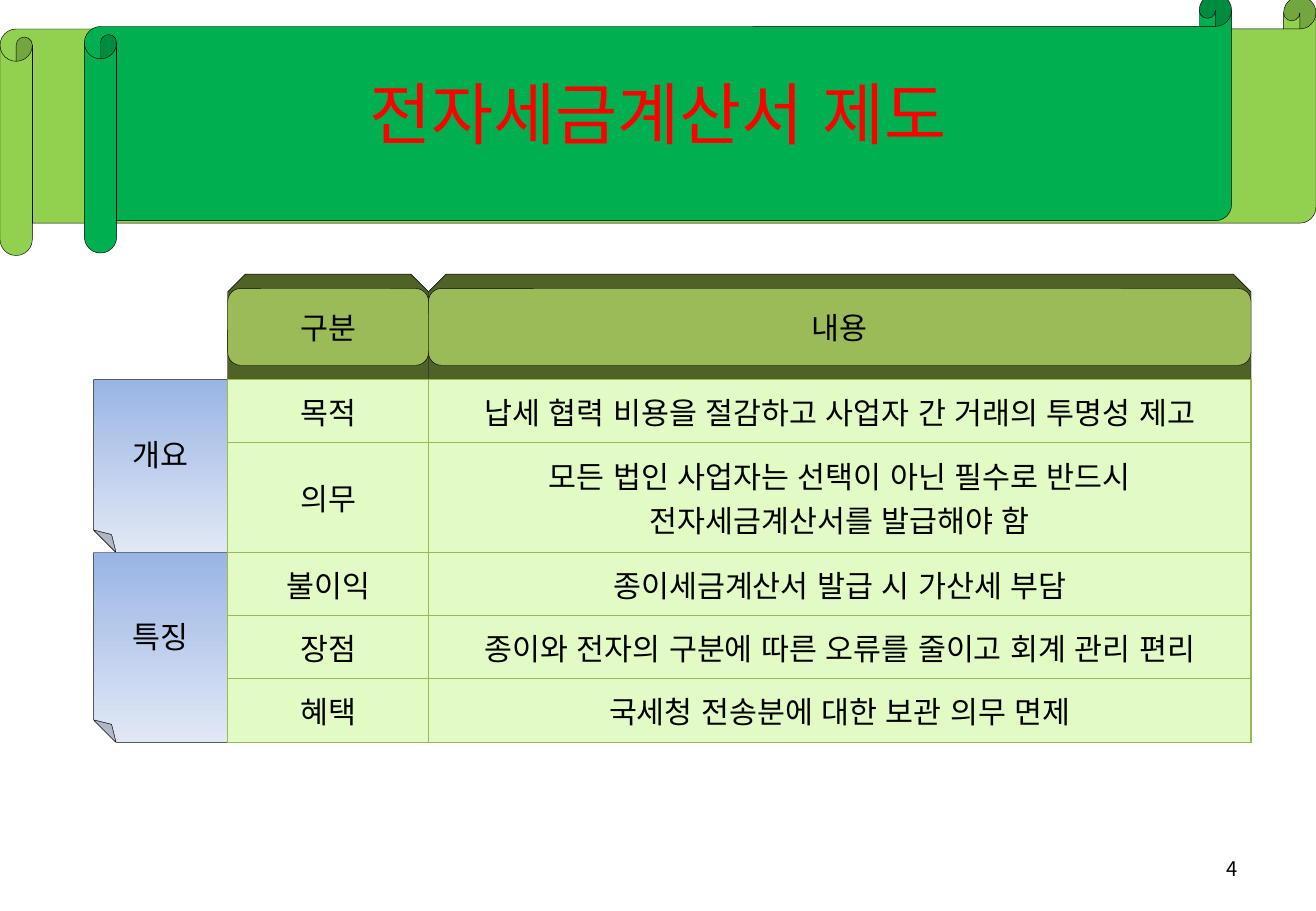
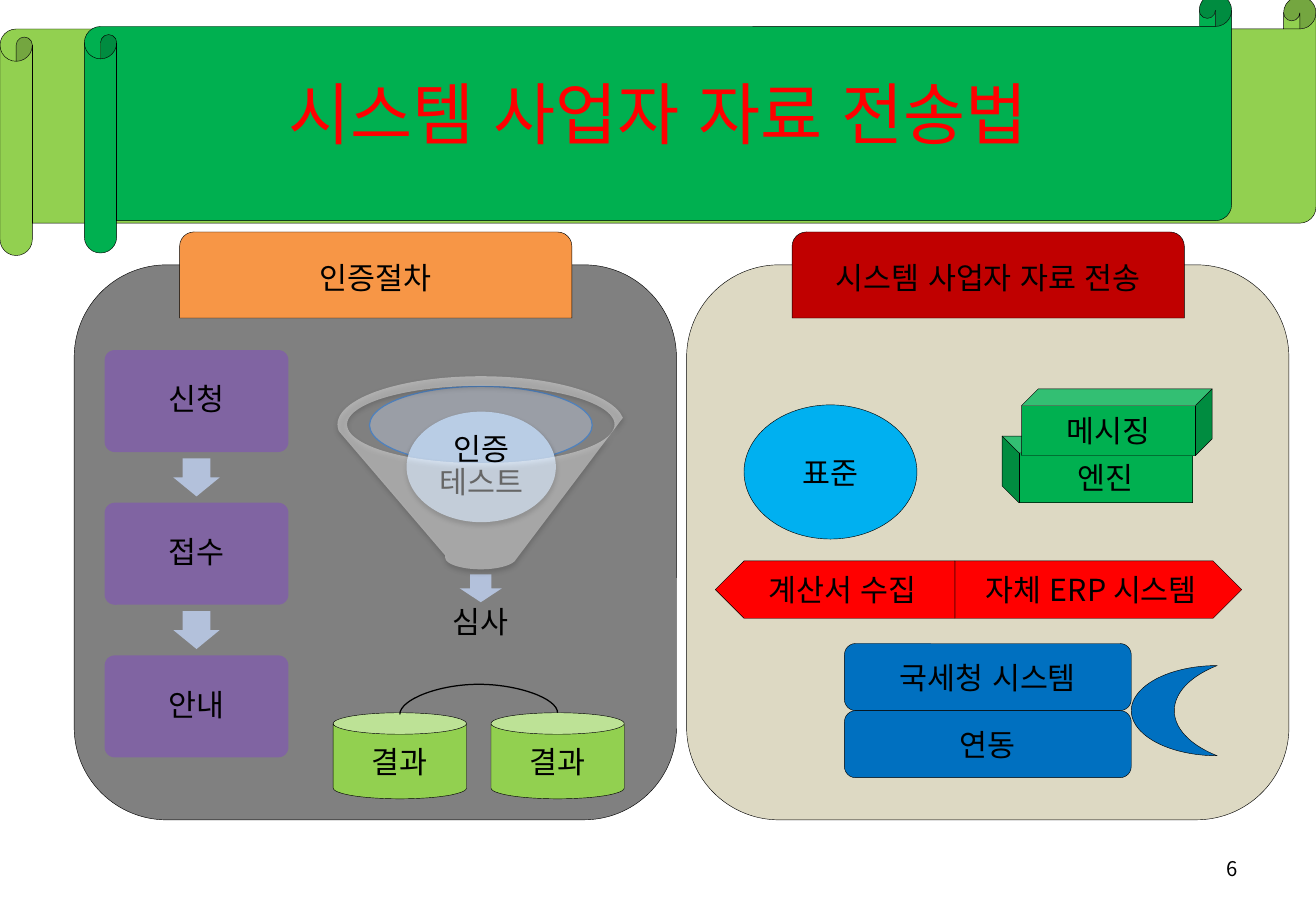
from itertools import accumulate
from lxml.etree import SubElement
from pptx import Presentation
from pptx.dml.color import RGBColor
from pptx.enum.lang import MSO_LANGUAGE_ID as Lang
from pptx.enum.shapes import MSO_CONNECTOR as Link, MSO_SHAPE as Form
from pptx.enum.text import MSO_ANCHOR as Anchor, MSO_AUTO_SIZE as AutoSize, PP_ALIGN as Align
from pptx.oxml.ns import qn
from pptx.util import Pt

FONT = "Noto Sans CJK KR"
BLACK, RED, GREEN, LIME = "000000", "FF0000", "00B050", "92D050"
OLIVE, DARK_OLIVE, PALE_GREEN, TABLE_LINE = "9BBB59", "4F6228", "E2FAC3", "98B955"
PURPLE, PALE_BLUE, BLUE = "8064A2", "B3C1DB", "0070C0"
SHEET = ("9AB5E4", "E1E8F5")

BANNERS = [(LIME, (0, -2, 780, 153.5)), (GREEN, (50, -3.5, 680, 153.5))]

HEADERS = ["구분", "내용"]
SECTIONS = [
    ("개요", [
        ("목적", "납세 협력 비용을 절감하고 사업자 간 거래의 투명성 제고", 37.5),
        ("의무", "모든 법인 사업자는 선택이 아닌 필수로 반드시 전자세금계산서를 발급해야 함", 65),
    ]),
    ("특징", [
        ("불이익", "종이세금계산서 발급 시 가산세 부담", 37.5),
        ("장점", "종이와 전자의 구분에 따른 오류를 줄이고 회계 관리 편리", 37.5),
        ("혜택", "국세청 전송분에 대한 보관 의무 면제", 37.5),
    ]),
]
TABLE_LEFT, TABLE_TOP, COLUMNS = 135, 225, (119, 487.5)
SECTION_WIDTH = 79.5
HEADER_HEIGHT, HEADER_INSET = 62.5, 8.5

PANELS = [
    (44, "808080", "인증절차", "F79646"),
    (407, "DDD9C3", "시스템 사업자 자료 전송", "C00000"),
]
STEPS = ["신청", "접수", "안내"]
RESULTS = ["결과", "결과"]
# form, text, fill, frame, mirrored
TRANSFER = [
    (Form.OVAL, "표준", "00B0F0", (441, 240, 102.5, 79.5), False),
    (Form.PENTAGON, "자체 ERP 시스템", RED, (566, 332.5, 170, 34), False),
    (Form.PENTAGON, "계산서 수집", RED, (424, 332.5, 142, 34), True),
    (Form.CUBE, "엔진", GREEN, (594, 258.5, 113, 39.5), True),
    (Form.CUBE, "메시징", GREEN, (605.5, 230.5, 113, 39.5), False),
    (Form.ROUNDED_RECTANGLE, "국세청 시스템", BLUE, (500.5, 381.5, 170, 39.75), False),
    (Form.ROUNDED_RECTANGLE, "연동", BLUE, (500.5, 421.25, 170, 39.75), False),
    (Form.MOON, "", BLUE, (670.5, 394.5, 51, 53.5), False),
]


def rgb(value):
    return RGBColor.from_string(value)


def points(frame):
    return [Pt(length) for length in frame]


def write(text_frame, text, size=18, color=BLACK, align=Align.CENTER, spacing=None):
    text_frame.text = text
    para = text_frame.paragraphs[0]
    para.alignment = align
    para.line_spacing = spacing
    font = para.runs[0].font
    font.size, font.name, font.language_id = Pt(size), FONT, Lang.KOREAN
    font.color.rgb = rgb(color)
    # Hangul takes its typeface from a:ea
    SubElement(para.runs[0].font._element, qn("a:ea"), typeface=FONT)


def set_up_frame(text_frame, margin=None):
    text_frame.word_wrap = True
    text_frame.auto_size = AutoSize.NONE
    text_frame.vertical_anchor = Anchor.MIDDLE
    if margin is not None:
        text_frame.margin_left = text_frame.margin_right = Pt(margin)
        text_frame.margin_top = text_frame.margin_bottom = Pt(margin)


def set_fill(shape, fill, opacity):
    if isinstance(fill, tuple):
        shape.fill.gradient()
        shape.fill.gradient_angle = 270
        for stop, color in zip(shape.fill.gradient_stops, fill):
            stop.color.rgb = rgb(color)
        return
    shape.fill.solid()
    shape.fill.fore_color.rgb = rgb(fill)
    if opacity < 100:
        color = shape.element.spPr.find(".//" + qn("a:srgbClr"))
        SubElement(color, qn("a:alpha"), val=str(opacity * 1000))


def cast_shadow(shape, opacity):
    effects = shape.element.spPr.find(qn("a:effectLst"))
    shadow = SubElement(effects, qn("a:outerShdw"), blurRad=str(Pt(3.1)),
                        dist=str(Pt(1.7)), dir="5400000", rotWithShape="0")
    color = SubElement(shadow, qn("a:srgbClr"), val=BLACK)
    SubElement(color, qn("a:alpha"), val=str(opacity * 1000))


def add_form(shapes, form, frame, fill, text="", line=BLACK, weight=0.25, opacity=100,
             mirrored=False, adjust=(), shadow=0, margin=None, spacing=None):
    shape = shapes.add_shape(form, *points(frame))
    shape.shadow.inherit = False
    for index, value in enumerate(adjust):
        shape.adjustments[index] = value
    set_fill(shape, fill, opacity)
    if line:
        shape.line.color.rgb = rgb(line)
        shape.line.width = Pt(weight)
    else:
        shape.line.fill.background()
    if mirrored:
        shape.element.spPr.xfrm.set("flipH", "1")
    if shadow:
        cast_shadow(shape, shadow)
    if text:
        set_up_frame(shape.text_frame, margin)
        write(shape.text_frame, text, spacing=spacing)
    return shape


def add_text(shapes, text, frame, **style):
    box = shapes.add_textbox(*points(frame))
    set_up_frame(box.text_frame)
    write(box.text_frame, text, **style)


def add_page(deck, layout, title, number):
    page = deck.slides.add_slide(layout)
    heading = page.shapes.title
    heading.left, heading.top, heading.width, heading.height = points((39, 21.5, 702, 90))
    set_up_frame(heading.text_frame)
    write(heading.text_frame, title, size=40, color=RED)
    add_text(page.shapes, number, (559, 500.5, 182, 29), size=12, align=Align.RIGHT)
    return page


def move_banners_to_layout(page, layout):
    for position, (color, frame) in enumerate(BANNERS, start=2):
        banner = add_form(page.shapes, Form.HORIZONTAL_SCROLL, frame, color)
        layout.shapes.element.insert(position, banner.element)


def style_cell(cell, text):
    properties = cell._tc.get_or_add_tcPr()
    for side in ("lnL", "lnR", "lnT", "lnB"):
        border = SubElement(properties, qn("a:" + side), w=str(Pt(0.75)))
        SubElement(SubElement(border, qn("a:solidFill")), qn("a:srgbClr"), val=TABLE_LINE)
    cell.fill.solid()
    cell.fill.fore_color.rgb = rgb(PALE_GREEN)
    cell.vertical_anchor = Anchor.MIDDLE
    write(cell.text_frame, text)


def draw_scheme(shapes):
    rows = [row for _, section in SECTIONS for row in section]
    lefts = accumulate(COLUMNS[:-1], initial=TABLE_LEFT)
    header_top = TABLE_TOP - HEADER_HEIGHT
    for left, width, text in zip(lefts, COLUMNS, HEADERS):
        add_form(shapes, Form.SNIP_2_SAME_RECTANGLE,
                 (left, header_top, width, HEADER_HEIGHT), DARK_OLIVE)
        add_form(shapes, Form.ROUNDED_RECTANGLE,
                 (left, header_top + HEADER_INSET, width, HEADER_HEIGHT - 2 * HEADER_INSET),
                 OLIVE, text)
    top = TABLE_TOP
    for name, section in SECTIONS:
        height = sum(row[2] for row in section)
        add_form(shapes, Form.FOLDED_CORNER,
                 (TABLE_LEFT - SECTION_WIDTH, top, SECTION_WIDTH, height),
                 SHEET, name, mirrored=True)
        top += height
    frame = (TABLE_LEFT, TABLE_TOP, sum(COLUMNS), top - TABLE_TOP)
    table = shapes.add_table(len(rows), len(COLUMNS), *points(frame)).table
    table.first_row = table.horz_banding = False
    for column, width in zip(table.columns, COLUMNS):
        column.width = Pt(width)
    for row, (*texts, height) in zip(table.rows, rows):
        row.height = Pt(height)
        for cell, text in zip(row.cells, texts):
            style_cell(cell, text)


def draw_panel(page, left, fill, name, tab_fill):
    shapes = page.shapes.add_group_shape().shapes
    add_form(shapes, Form.ROUNDED_RECTANGLE, (left, 157, 357, 329), fill)
    add_form(shapes, Form.ROUND_2_SAME_RECTANGLE, (left + 62.5, 137.5, 232.5, 51),
             tab_fill, name)
    return shapes


def draw_steps(shapes):
    left, top, width, height, pitch = 62, 207.5, 109, 60.5, 90.5
    arrow_width, arrow_height = 27.5, 22.5
    for index, text in enumerate(STEPS):
        step_top = top + index * pitch
        add_form(shapes, Form.ROUNDED_RECTANGLE, (left, step_top, width, height), PURPLE,
                 text, line=None, adjust=[0.1], margin=5, spacing=0.9)
        if index:
            gap_middle = step_top - (pitch - height) / 2
            add_form(shapes, Form.DOWN_ARROW,
                     (left + (width - arrow_width) / 2, gap_middle - arrow_height / 2,
                      arrow_width, arrow_height),
                     PALE_BLUE, line=None, adjust=[0.6, 0.5])


def draw_results(shapes):
    left, top, width, height, pitch = 197.5, 422.5, 79, 51, 93.5
    for index, text in enumerate(RESULTS):
        add_form(shapes, Form.CAN, (left + index * pitch, top, width, height), LIME, text)
    # An upright 1 pt wide connector, turned a quarter, arches 18 times its width
    middle = left + (width + pitch) / 2
    arch = shapes.add_connector(Link.CURVE, *points(
        (middle - 0.5, top + 0.5 - pitch / 2, middle + 0.5, top + 0.5 + pitch / 2)))
    arch.line.color.rgb = rgb(BLACK)
    arch.line.width = Pt(0.75)
    properties = arch.element.spPr
    for name, value in (("rot", "5400000"), ("flipH", "1"), ("flipV", "1")):
        properties.xfrm.set(name, value)
    guides = properties.find(".//" + qn("a:avLst"))
    SubElement(guides, qn("a:gd"), name="adj1", fmla="val 1800000")
    SubElement(properties, qn("a:effectLst"))


def draw_funnel(shapes):
    add_form(shapes, Form.OVAL, (219, 229, 132, 46), "C2CDE1", line="4F81BD",
             weight=0.75, opacity=40)
    add_form(shapes, Form.DOWN_ARROW, (272.5, 340.5, 25, 16.5), PALE_BLUE, line=None)
    add_text(shapes, "심사", (224, 354, 122, 31), spacing=0.9)
    add_form(shapes, Form.OVAL, (241, 244, 88.5, 65.5), "B9CDE5", "인증 테스트",
             line=None, shadow=35, margin=2, spacing=0.9)
    add_form(shapes, Form.FUNNEL, (200, 223, 170, 114.5), "FFFFFF", line=None,
             opacity=40, shadow=38)


def main():
    deck = Presentation()
    deck.slide_width, deck.slide_height = Pt(780), Pt(540)
    layout = deck.slide_layouts[5]

    scheme = add_page(deck, layout, "전자세금계산서 제도", "4")
    move_banners_to_layout(scheme, layout)
    draw_scheme(scheme.shapes)

    delivery = add_page(deck, layout, "시스템 사업자 자료 전송법", "6")
    approval, transfer = [draw_panel(delivery, *panel) for panel in PANELS]
    draw_results(approval)
    draw_steps(approval)
    draw_funnel(approval)
    for form, text, fill, frame, mirrored in TRANSFER:
        add_form(transfer, form, frame, fill, text, mirrored=mirrored)

    deck.save("out.pptx")


if __name__ == "__main__":
    main()
